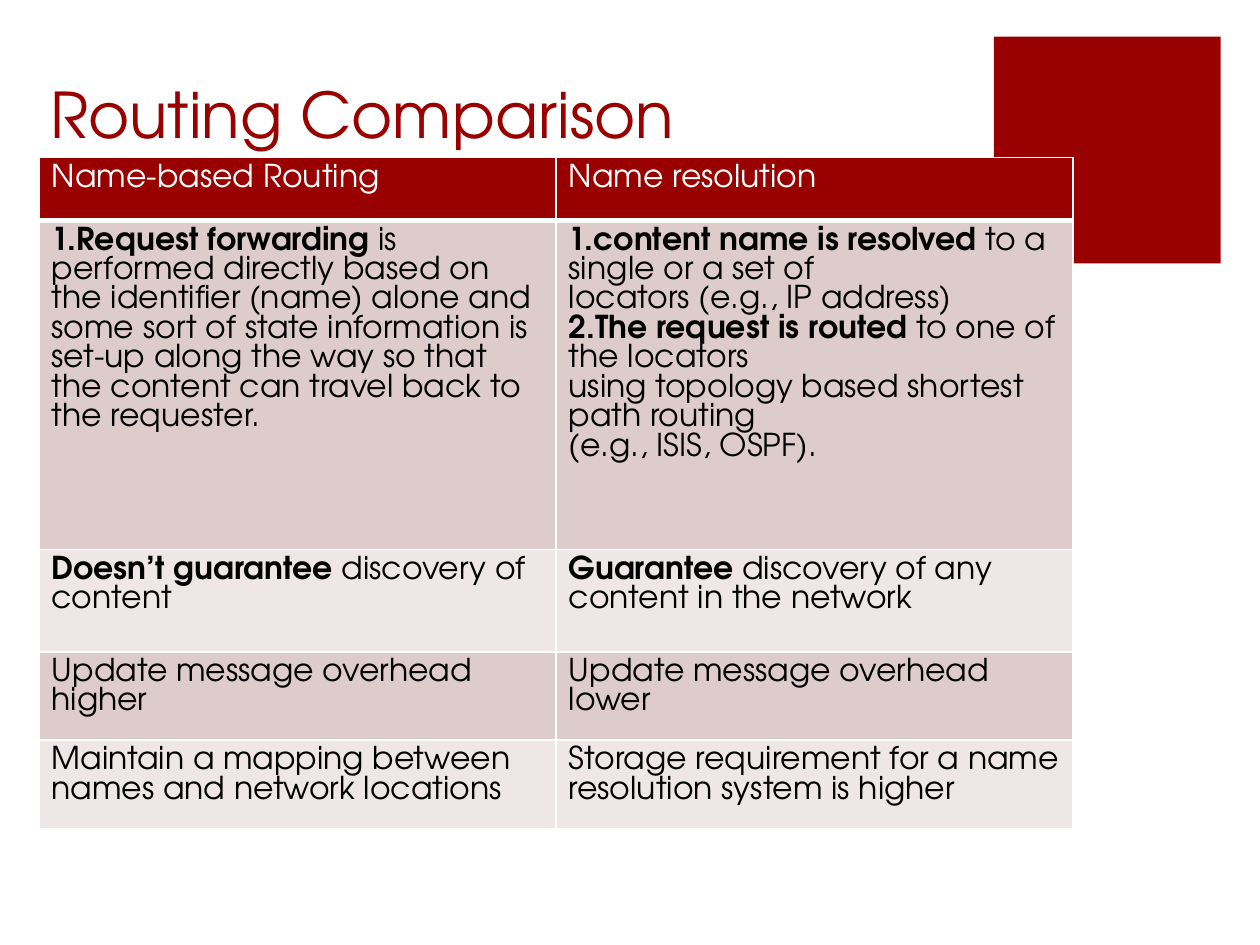
from typing import NamedTuple

import pptx
import pptx.dml.color
import pptx.enum.shapes
import pptx.enum.text
import pptx.oxml
import pptx.oxml.ns
import pptx.util

Pt = pptx.util.Pt
RGBColor = pptx.dml.color.RGBColor

FONT = "TeX Gyre Adventor"
RED = RGBColor(0x99, 0x00, 0x00)
WHITE = RGBColor(0xFF, 0xFF, 0xFF)
BLACK = RGBColor(0x00, 0x00, 0x00)
DARK_BAND = RGBColor(0xDE, 0xCC, 0xCC)
LIGHT_BAND = RGBColor(0xEF, 0xE7, 0xE7)

TITLE_SIZE = 36
BODY_SIZE = 18
COLUMN_WIDTH = 295.5


class Run(NamedTuple):
    text: str
    bold: bool = False


Paragraph = list[Run]


class Row(NamedTuple):
    height: float
    cells: list[list[Paragraph]]


ROWS = [
    Row(36, [[[Run("Name-based Routing")]], [[Run("Name resolution")]]]),
    Row(188, [
        [
            [Run("1.Request forwarding ", True),
             Run("is performed directly based on the identifier (name) alone and "
                 "some sort of state information is set-up along the way so that "
                 "the content can travel back to")],
            [Run("the requester.")],
        ],
        [
            [Run("1.content name is resolved ", True), Run("to a single or a set of")],
            [Run("locators (e.g., IP address)")],
            [Run("2.The request is routed ", True), Run("to one of the locators")],
            [Run("using topology based shortest path routing")],
            [Run("(e.g., ISIS, OSPF).")],
        ],
    ]),
    Row(58.5, [
        [[Run("Doesn’t guarantee ", True), Run("discovery of content")]],
        [[Run("Guarantee", True), Run(" discovery of any content in the network")]],
    ]),
    Row(36, [
        [[Run("Update message overhead higher")]],
        [[Run("Update message overhead lower")]],
    ]),
    Row(36, [
        [[Run("Maintain a mapping between names and network locations")]],
        [[Run("Storage requirement for a name resolution system is higher")]],
    ]),
]


def write_text(text_frame, paragraphs: list[Paragraph], size: float, color: RGBColor) -> None:
    for index, runs in enumerate(paragraphs):
        paragraph = text_frame.add_paragraph() if index else text_frame.paragraphs[0]
        for part in runs:
            run = paragraph.add_run()
            run.text = part.text
            run.font.name = FONT
            run.font.size = Pt(size)
            run.font.bold = part.bold
            run.font.color.rgb = color


def set_borders(cell, top: float, bottom: float) -> None:
    """Give a cell white borders; the left and right ones are 1 pt wide."""
    properties = cell._tc.get_or_add_tcPr()
    widths = {"lnL": 1, "lnR": 1, "lnT": top, "lnB": bottom}
    for position, (tag, width) in enumerate(widths.items()):
        properties.insert(position, pptx.oxml.parse_xml(
            f'<a:{tag} {pptx.oxml.ns.nsdecls("a")} w="{Pt(width)}">'
            f'<a:solidFill><a:srgbClr val="{WHITE}"/></a:solidFill></a:{tag}>'))


def add_corner_square(slide) -> None:
    square = slide.shapes.add_shape(
        pptx.enum.shapes.MSO_SHAPE.RECTANGLE, Pt(568), Pt(21), Pt(129.6), Pt(129.6))
    square.shadow.inherit = False
    square.fill.solid()
    square.fill.fore_color.rgb = RED
    square.line.fill.background()


def add_title(slide) -> None:
    title = slide.shapes.add_textbox(Pt(21.6), Pt(0), Pt(512.6), Pt(90))
    title.text_frame.word_wrap = True
    title.text_frame.vertical_anchor = pptx.enum.text.MSO_ANCHOR.BOTTOM
    write_text(title.text_frame, [[Run("Routing Comparison")]], TITLE_SIZE, RED)


def add_comparison_table(slide) -> None:
    table = slide.shapes.add_table(
        len(ROWS), 2, Pt(22.3), Pt(90), Pt(2 * COLUMN_WIDTH),
        Pt(sum(row.height for row in ROWS))).table
    for column in table.columns:
        column.width = Pt(COLUMN_WIDTH)
    for row_index, row in enumerate(ROWS):
        table.rows[row_index].height = Pt(row.height)
        is_header = row_index == 0
        band = DARK_BAND if row_index % 2 else LIGHT_BAND
        for column_index, paragraphs in enumerate(row.cells):
            cell = table.cell(row_index, column_index)
            cell.fill.solid()
            cell.fill.fore_color.rgb = RED if is_header else band
            set_borders(cell, top=3 if row_index == 1 else 1, bottom=3 if is_header else 1)
            write_text(cell.text_frame, paragraphs, BODY_SIZE, WHITE if is_header else BLACK)


def main() -> None:
    presentation = pptx.Presentation()
    presentation.slide_width = Pt(720)
    presentation.slide_height = Pt(540)
    slide = presentation.slides.add_slide(presentation.slide_layouts[6])
    add_corner_square(slide)
    add_title(slide)
    add_comparison_table(slide)
    presentation.save("out.pptx")


if __name__ == "__main__":
    main()
